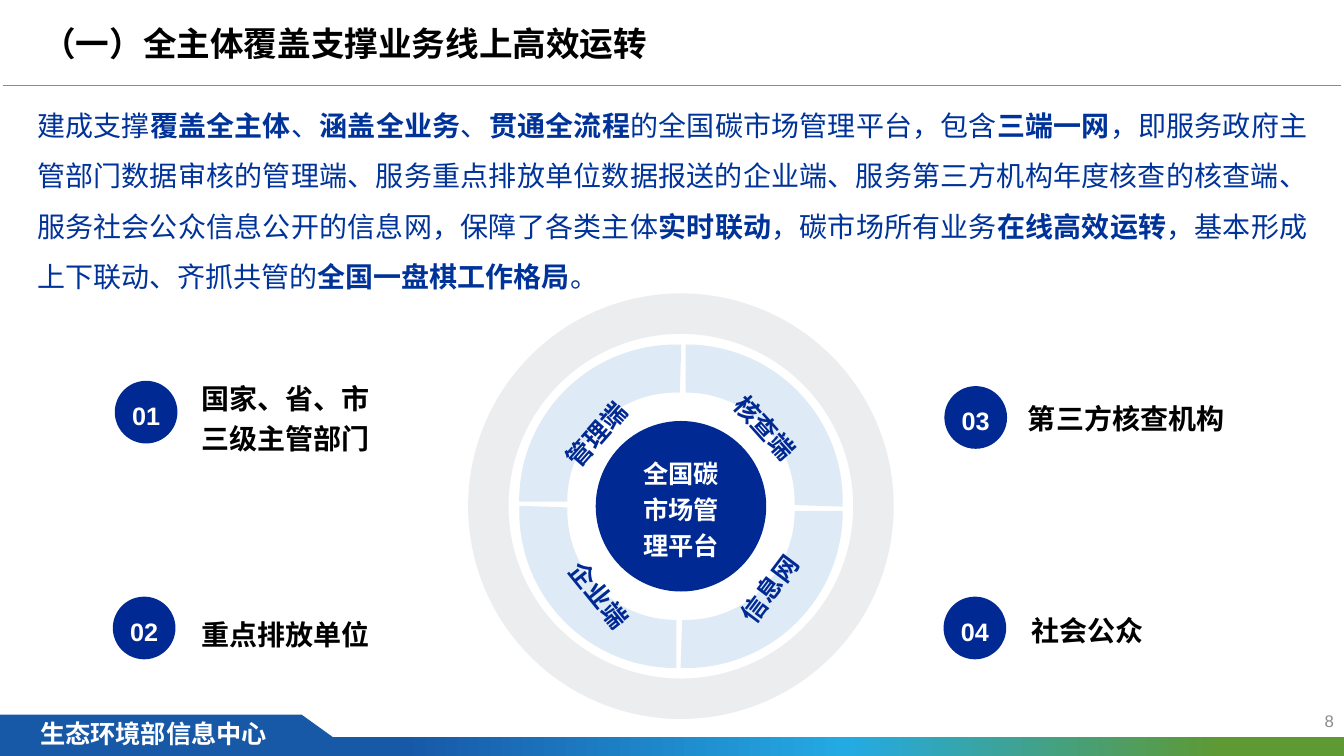
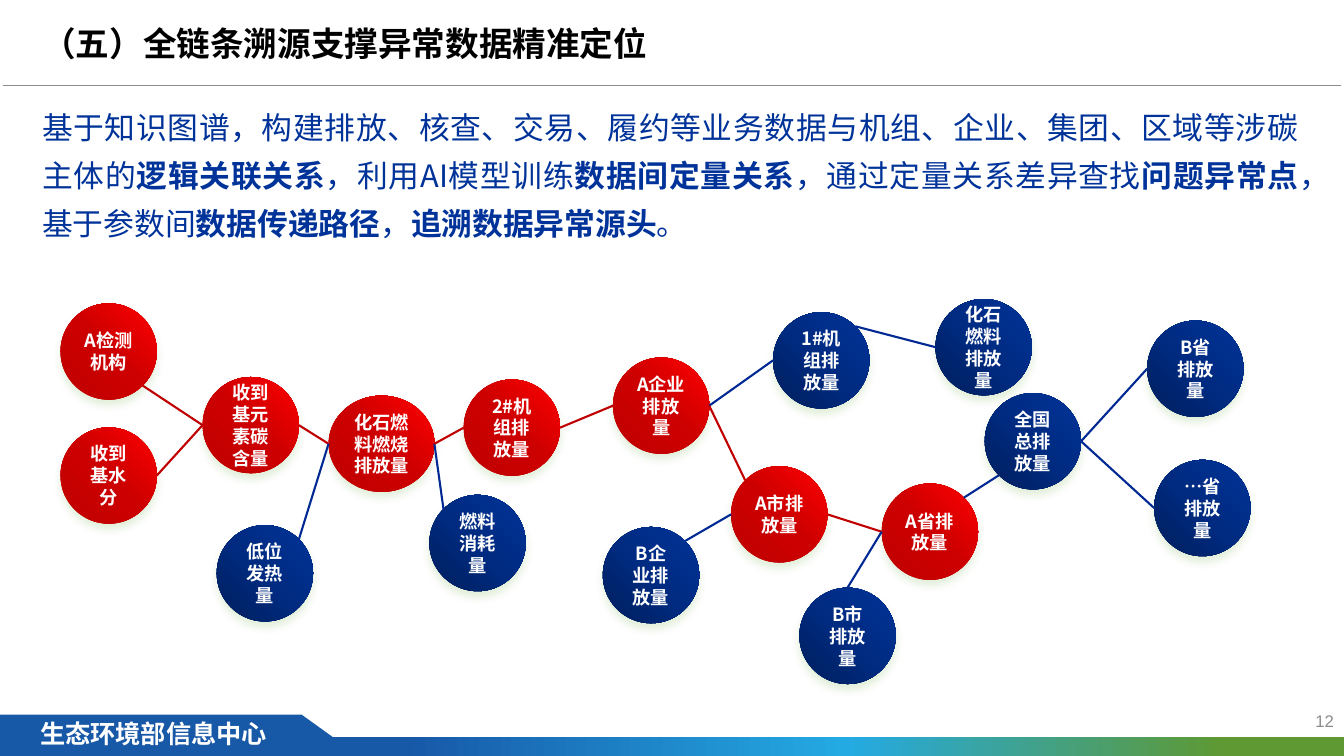
import math
from dataclasses import dataclass
from typing import NamedTuple

import lxml.etree
import pptx
import pptx.dml.color
import pptx.enum.shapes
import pptx.enum.text
import pptx.oxml.ns
import pptx.util
from pptx.util import Pt

SHAPES = pptx.enum.shapes.MSO_SHAPE
ALIGN = pptx.enum.text.PP_ALIGN
ANCHOR = pptx.enum.text.MSO_ANCHOR
qn = pptx.oxml.ns.qn


@dataclass(frozen=True)
class Theme:
    cjk: str = "Noto Sans CJK SC"
    latin: str = "Arial"
    navy: str = "002993"
    body: str = "003399"
    red: str = "C00000"
    black: str = "000000"
    white: str = "FFFFFF"
    gray: str = "8C8C8C"
    ring: str = "44546A"
    segment: str = "DEEBF7"
    shadow: str = "70AD47"
    band: str = "1758A7"
    band_stops: tuple = ((30, "1758A7"), (63, "24AAE3"), (91, "5E9933"))
    red_stops: tuple = ((0, "C00000"), (50, "CC0000"), (100, "FF0000"))
    navy_stops: tuple = ((0, "001E5B"), (50, "002B81"), (100, "003399"))
    title_size: float = 24
    lead_size: float = 22
    text_size: float = 20
    label_size: float = 18
    node_size: float = 13
    number_size: float = 12


THEME = Theme()


class Box(NamedTuple):
    left: float
    top: float
    width: float
    height: float

    def lengths(self) -> list:
        return [Pt(value) for value in self]


def centred(x: float, y: float, width: float, height: float) -> Box:
    return Box(x - width / 2, y - height / 2, width, height)


class Party(NamedTuple):
    number: str
    text: str
    badge: tuple[float, float]
    label: tuple[float, float]


class Segment(NamedTuple):
    text: str
    arc_turn: float
    side: tuple[int, int]
    label: tuple[float, float]
    label_turn: float


class Node(NamedTuple):
    text: str
    left: float
    top: float
    abnormal: bool = False
    width: float = 68.8


class Edge(NamedTuple):
    start: str
    start_site: int
    end: str
    end_site: int


# Connection sites of an ellipse, counter-clockwise from the top
TOP, TOP_LEFT, LEFT, BOTTOM_LEFT, BOTTOM, BOTTOM_RIGHT, RIGHT, TOP_RIGHT = range(8)

PARTIES = [
    Party("01", "国家、省、市\n三级主管部门", (82, 272), (136.8, 264.2)),
    Party("02", "重点排放单位", (80.6, 426.2), (136.8, 432.7)),
    Party("03", "第三方核查机构", (674.6, 275.8), (727.2, 278.6)),
    Party("04", "社会公众", (674, 426.2), (729.4, 429.8)),
]
SEGMENTS = [
    Segment("核查端", 0, (1, -1), (546.5, 305.6), 48.1),
    Segment("信息网", 90, (1, 1), (550, 420.8), 307),
    Segment("企业端", 180, (-1, 1), (427.7, 425.2), 51),
    Segment("管理端", 270, (-1, -1), (426.2, 310.7), 311.4),
]
NODES = [
    Node("A检测机构", 43.2, 216.7, True),
    Node("收到基水分", 43.2, 305.3, True),
    Node("收到基元素碳含量", 144.7, 269.3, True),
    Node("低位发热量", 154.8, 375.1),
    Node("化石燃料燃烧排放量", 234.7, 282.6, True, 75.6),
    Node("燃料消耗量", 306.7, 353.5),
    Node("2#机组排放量", 331.2, 271.1, True),
    Node("A企业排放量", 437.8, 255.4, True),
    Node("B企业排放量", 430.6, 376.4),
    Node("1#机组排放量", 552.2, 223),
    Node("化石燃料排放量", 668.2, 213.6),
    Node("A市排放量", 522.2, 333),
    Node("B市排放量", 571, 419.8),
    Node("A省排放量", 629.8, 345.4, True),
    Node("全国总排放量", 703.4, 280.8),
    Node("B省排放量", 819.4, 229),
    Node("…省排放量", 824.4, 328.5),
]
NODES[11] = NODES[11]._replace(abnormal=True)
EDGES = [
    Edge("A检测机构", BOTTOM_RIGHT, "收到基元素碳含量", LEFT),
    Edge("收到基水分", RIGHT, "收到基元素碳含量", LEFT),
    Edge("收到基元素碳含量", RIGHT, "化石燃料燃烧排放量", LEFT),
    Edge("低位发热量", TOP_RIGHT, "化石燃料燃烧排放量", LEFT),
    Edge("化石燃料燃烧排放量", RIGHT, "燃料消耗量", TOP_LEFT),
    Edge("化石燃料燃烧排放量", RIGHT, "2#机组排放量", LEFT),
    Edge("2#机组排放量", RIGHT, "A企业排放量", LEFT),
    Edge("A企业排放量", RIGHT, "1#机组排放量", LEFT),
    Edge("1#机组排放量", TOP_RIGHT, "化石燃料排放量", LEFT),
    Edge("A企业排放量", RIGHT, "A市排放量", TOP_LEFT),
    Edge("B企业排放量", TOP_RIGHT, "A市排放量", LEFT),
    Edge("A市排放量", RIGHT, "A省排放量", LEFT),
    Edge("B市排放量", TOP, "A省排放量", LEFT),
    Edge("A省排放量", TOP_RIGHT, "全国总排放量", BOTTOM_LEFT),
    Edge("全国总排放量", RIGHT, "B省排放量", LEFT),
    Edge("全国总排放量", RIGHT, "…省排放量", LEFT),
]
PLATFORM_TEXT = (
    "建成支撑*覆盖全主体*、*涵盖全业务*、*贯通全流程*的全国碳市场管理平台，包含*三端一网*，"
    "即服务政府主管部门数据审核的管理端、服务重点排放单位数据报送的企业端、"
    "服务第三方机构年度核查的核查端、服务社会公众信息公开的信息网，保障了各类主体*实时联动*，"
    "碳市场所有业务*在线高效运转*，基本形成上下联动、齐抓共管的*全国一盘棋工作格局*。")
TRACING_TEXT = (
    "基于知识图谱，构建排放、核查、交易、履约等业务数据与机组、企业、集团、区域等涉碳主体的"
    "*逻辑关联关系*，利用AI模型训练*数据间定量关系*，通过定量关系差异查找*问题异常点*，"
    "基于参数间*数据传递路径*，*追溯数据异常源头*。")


def rgb(color: str):
    return pptx.dml.color.RGBColor.from_string(color)


def add_xml(parent, tag: str, **attributes):
    return lxml.etree.SubElement(parent, qn(tag), {k: str(v) for k, v in attributes.items()})


def style_span(span, size: float, color: str, bold: bool, face: str) -> None:
    span.font.size, span.font.bold = Pt(size), bold
    span.font.color.rgb = rgb(color)
    span.font.name = face
    add_xml(span.font._element, "a:ea", typeface=THEME.cjk)


def write(shape, text: str, size: float, color: str, *, bold: bool = True, face: str = THEME.cjk,
          align=ALIGN.LEFT, anchor=ANCHOR.TOP, spacing: float = 1, wrap: bool = True) -> None:
    """Fill a shape with text; stretches between asterisks have the opposite weight."""
    frame = shape.text_frame
    frame.word_wrap, frame.vertical_anchor = wrap, anchor
    frame.auto_size = pptx.enum.text.MSO_AUTO_SIZE.NONE
    for index, line in enumerate(text.split("\n")):
        para = frame.add_paragraph() if index else frame.paragraphs[0]
        para.alignment, para.line_spacing = align, spacing
        for part, stretch in enumerate(line.split("*")):
            span = para.add_run()
            span.text = stretch
            style_span(span, size, color, bold != bool(part % 2), face)


def add_text(page, box: Box, text: str, size: float, color: str, **options):
    shape = page.shapes.add_textbox(*box.lengths())
    write(shape, text, size, color, **options)
    return shape


def add_plain_shape(page, kind, box: Box, color: str):
    shape = page.shapes.add_shape(kind, *box.lengths())
    shape.shadow.inherit = False
    paint(shape, color)
    return shape


def paint(shape, color: str) -> None:
    shape.fill.solid()
    shape.fill.fore_color.rgb = rgb(color)
    shape.line.fill.background()


def paint_gradient(shape, stops: tuple, angle: float) -> None:
    shape.fill.gradient()
    shape.fill.gradient_angle = angle
    stop_list = shape.element.find(".//" + qn("a:gsLst"))
    for stop in list(stop_list):
        stop_list.remove(stop)
    for position, color in stops:
        add_xml(add_xml(stop_list, "a:gs", pos=position * 1000), "a:srgbClr", val=color)


def add_line(page, start: tuple, end: tuple, color: str, width: float):
    line = page.shapes.add_connector(pptx.enum.shapes.MSO_CONNECTOR.STRAIGHT,
                                     *[Pt(value) for value in (*start, *end)])
    line.line.color.rgb, line.line.width = rgb(color), Pt(width)
    add_xml(line.element.spPr, "a:effectLst")
    return line


def add_page(deck, layout, title: str, number: int):
    page = deck.slides.add_slide(layout)
    heading = page.shapes.title
    heading.left, heading.top, heading.width, heading.height = Box(23, 13, 600, 36).lengths()
    write(heading, title, THEME.title_size, THEME.black)
    add_text(page, Box(744, 500.4, 216, 28.8), str(number), THEME.number_size, THEME.gray,
             bold=False, face=THEME.latin, align=ALIGN.RIGHT, anchor=ANCHOR.MIDDLE)
    return page


def move_furniture_to_layout(page, layout) -> None:
    """Draw the shared rule and footer on a page, then move them to its layout."""
    outline = page.shapes.build_freeform(Pt(0), Pt(510.5))
    outline.add_line_segments([(Pt(215.5), Pt(510.5)), (Pt(256.5), Pt(540)), (Pt(0), Pt(540))])
    tab = outline.convert_to_shape()
    tab.shadow.inherit = False
    paint(tab, THEME.band)
    band = add_plain_shape(page, SHAPES.RECTANGLE, Box(0, 526.5, 960, 13.5), THEME.band)
    paint_gradient(band, THEME.band_stops, 0)
    owner = add_text(page, Box(21.6, 509.8, 190, 29), "生态环境部信息中心", THEME.label_size,
                     THEME.white, face=THEME.latin)
    rule = add_line(page, (2, 60.8), (958, 60.8), THEME.gray, 0.5)
    for shape in (tab, band, owner, rule):
        layout.shapes.element.append(shape.element)


def add_party(page, party: Party) -> None:
    badge = add_plain_shape(page, SHAPES.OVAL, Box(*party.badge, 44.8, 44.8), THEME.navy)
    write(badge, party.number, THEME.label_size, THEME.white, face=THEME.latin,
          align=ALIGN.CENTER, anchor=ANCHOR.MIDDLE, spacing=1.2, wrap=False)
    add_text(page, Box(*party.label, 198, 33), party.text, THEME.text_size, THEME.black,
             spacing=1.2)


def add_wheel(page, x: float, y: float) -> None:
    ring = add_plain_shape(page, SHAPES.DONUT, centred(x, y, 304, 304), THEME.ring)
    ring.adjustments[0] = 0.095
    add_xml(ring.element.spPr.find(".//" + qn("a:srgbClr")), "a:alpha", val=10000)
    hub = add_plain_shape(page, SHAPES.OVAL, centred(x, y, 121.8, 121.8), THEME.navy)
    write(hub, "全国碳市场管理平台", THEME.label_size, THEME.white, align=ALIGN.CENTER,
          anchor=ANCHOR.MIDDLE, spacing=1.2)
    gap = 3.8
    for segment in SEGMENTS:
        across, down = segment.side
        arc = add_plain_shape(page, SHAPES.BLOCK_ARC,
                              centred(x + across * gap, y + down * gap, 222.5, 222.5),
                              THEME.segment)
        for index, value in enumerate((162, 1.1, 0.15)):
            arc.adjustments[index] = value
        arc.rotation = segment.arc_turn
        arc.line.color.rgb, arc.line.width = rgb(THEME.segment), Pt(1)
    for segment in SEGMENTS:
        label = add_text(page, centred(*segment.label, 151, 29.5), segment.text,
                         THEME.label_size, THEME.navy, align=ALIGN.CENTER)
        label.rotation = segment.label_turn


def add_node(page, node: Node):
    shape = add_plain_shape(page, SHAPES.OVAL, Box(node.left, node.top, node.width, 68.8),
                            THEME.navy)
    paint_gradient(shape, THEME.red_stops if node.abnormal else THEME.navy_stops, 45)
    shadow = add_xml(shape.element.spPr.find(qn("a:effectLst")), "a:outerShdw",
                     blurRad=Pt(6), dist=Pt(4), dir=5400000, algn="t", rotWithShape=0)
    add_xml(add_xml(shadow, "a:srgbClr", val=THEME.shadow), "a:alpha", val=20000)
    write(shape, node.text, THEME.node_size, THEME.white, align=ALIGN.CENTER,
          anchor=ANCHOR.MIDDLE)
    return shape


def site_point(shape, site: int) -> tuple[float, float]:
    angle = math.radians(45 * site)
    return (shape.left.pt + shape.width.pt / 2 * (1 - math.sin(angle)),
            shape.top.pt + shape.height.pt / 2 * (1 - math.cos(angle)))


def add_graph(page) -> None:
    circles = {node.text: add_node(page, node) for node in NODES}
    abnormal = {node.text for node in NODES if node.abnormal}
    for edge in EDGES:
        start, end = circles[edge.start], circles[edge.end]
        color = THEME.red if {edge.start, edge.end} <= abnormal else THEME.navy
        line = add_line(page, site_point(start, edge.start_site),
                        site_point(end, edge.end_site), color, 1.5)
        joints = line.element.find(".//" + qn("p:cNvCxnSpPr"))
        add_xml(joints, "a:stCxn", id=start.shape_id, idx=edge.start_site)
        add_xml(joints, "a:endCxn", id=end.shape_id, idx=edge.end_site)


def main() -> None:
    deck = pptx.Presentation()
    deck.slide_width, deck.slide_height = Pt(960), Pt(540)
    layout = deck.slide_layouts.get_by_name("Title Only")

    platform = add_page(deck, layout, "（一）全主体覆盖支撑业务线上高效运转", 8)
    add_text(platform, Box(19.4, 62, 921.6, 148), PLATFORM_TEXT, THEME.text_size, THEME.body,
             bold=False, align=ALIGN.JUSTIFY, spacing=1.5)
    for party in PARTIES:
        add_party(platform, party)
    add_wheel(platform, 486.4, 361.6)
    move_furniture_to_layout(platform, layout)

    tracing = add_page(deck, layout, "（五）全链条溯源支撑异常数据精准定位", 12)
    add_text(tracing, Box(23, 66.2, 912.2, 108), TRACING_TEXT, THEME.lead_size, THEME.body,
             bold=False, align=ALIGN.JUSTIFY, spacing=1.3)
    add_graph(tracing)
    deck.save("out.pptx")


if __name__ == "__main__":
    main()
